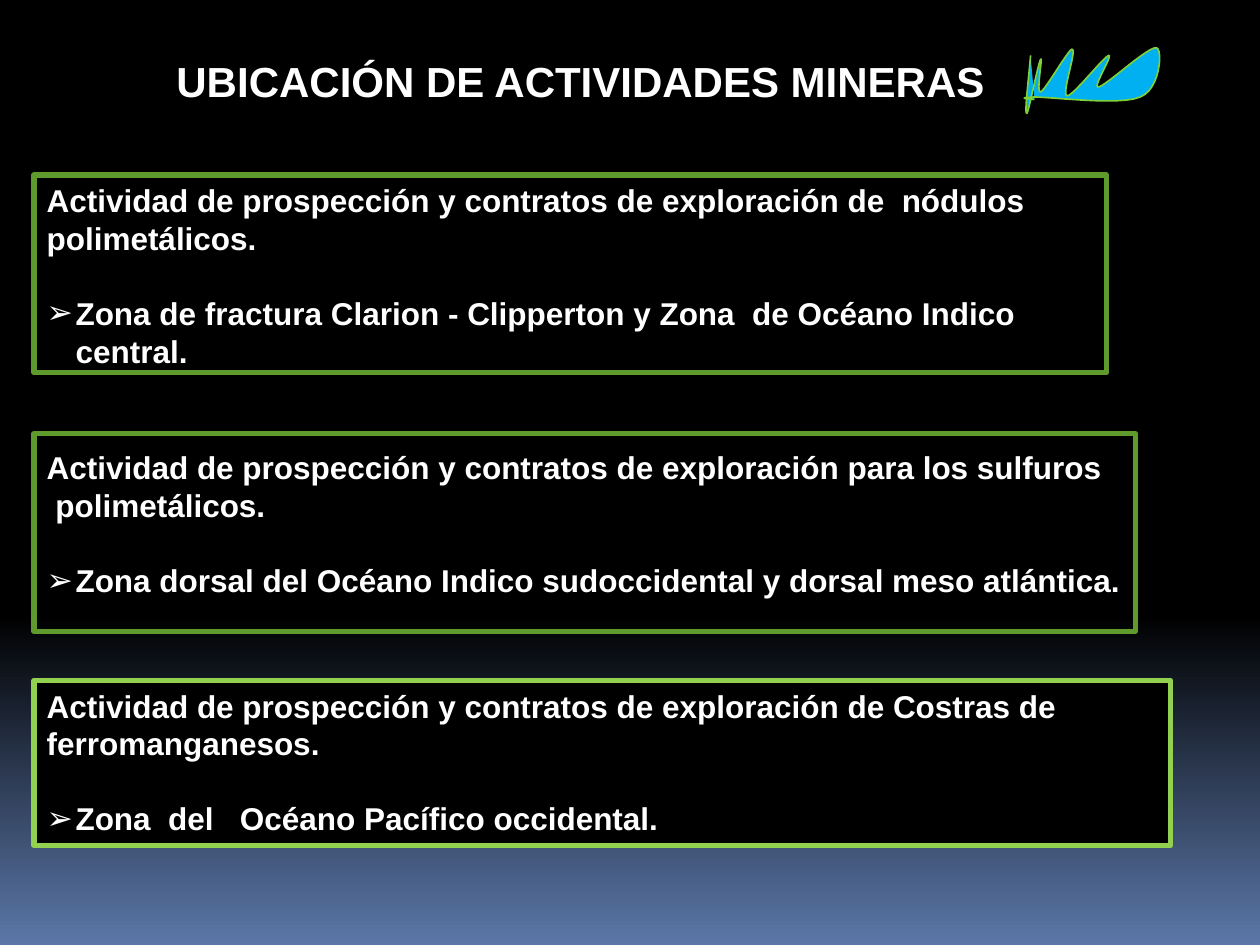
from collections import namedtuple

from lxml.etree import SubElement
from pptx import Presentation
from pptx.dml.color import RGBColor
from pptx.enum.text import MSO_ANCHOR as Anchor, MSO_AUTO_SIZE as AutoSize, PP_ALIGN as Align
from pptx.oxml.ns import qn
from pptx.util import Emu, Inches, Pt

BLACK = RGBColor(0x00, 0x00, 0x00)
WHITE = RGBColor(0xFF, 0xFF, 0xFF)
SLATE_BLUE = RGBColor(0x5B, 0x77, 0xA8)
DARK_GREEN = RGBColor(0x5E, 0x9B, 0x2C)
LIGHT_GREEN = RGBColor(0x92, 0xD0, 0x50)
WAVE_GREEN = RGBColor(0x7F, 0xD1, 0x3B)
WAVE_BLUE = RGBColor(0x00, 0xB0, 0xF0)

FONT = "Arial"
SLIDE_W, SLIDE_H = Inches(10), Inches(7.5)
LINE_PITCH = Pt(21.5)
BULLET_INDENT = 0.023 * SLIDE_W
COMPARISON_LAYOUT = 4

Box = namedtuple("Box", "left top width height")
Activity = namedtuple("Activity", "lead zone box border fill top_inset lead_indent")


def share(left, top, width, height):
    """Box from percentages of the slide's width and height."""
    return Box(Emu(round(SLIDE_W * left / 100)), Emu(round(SLIDE_H * top / 100)),
               Emu(round(SLIDE_W * width / 100)), Emu(round(SLIDE_H * height / 100)))


ACTIVITIES = [
    Activity("Actividad de prospección y contratos de exploración de  nódulos polimetálicos.",
             "Zona de fractura Clarion - Clipperton y Zona  de Océano Indico central.",
             share(2.7, 18.53, 85.1, 20.93), DARK_GREEN, None, 0.05, 0),
    Activity("Actividad de prospección y contratos de exploración para los sulfuros polimetálicos.",
             "Zona dorsal del Océano Indico sudoccidental y dorsal meso atlántica.",
             share(2.7, 45.87, 87.4, 20.93), DARK_GREEN, None, 0.12, 0.007 * SLIDE_W),
    Activity("Actividad de prospección y contratos de exploración de Costras de ferromanganesos.",
             "Zona  del   Océano Pacífico occidental.",
             share(2.7, 72, 90.2, 17.47), LIGHT_GREEN, BLACK, 0.05, 0),
]

# Wave outline on a 116 x 54 grid: a start, then cubic curves (two controls, end).
WAVE_GRID = (116, 54)
WAVE_START = (11, 8)
WAVE_CURVES = [
    ((9, 31), (6, 54), (8, 54)),
    ((9, 55), (17, 14), (19, 11)),
    ((21, 8), (15, 38), (19, 37)),
    ((23, 35), (41, 3), (44, 3)),
    ((48, 4), (35, 39), (40, 40)),
    ((44, 41), (69, 9), (73, 8)),
    ((77, 7), (59, 35), (65, 33)),
    ((71, 32), (105, 0), (111, 2)),
    ((116, 3), (114, 35), (98, 41)),
    ((82, 48), (28, 41), (14, 41)),
    ((0, 42), (7, 42), (14, 43)),
]


def paint_background(slide):
    fill = slide.background.fill
    fill.gradient()
    fill.gradient_angle = 270
    for stop, color, position in zip(fill.gradient_stops, (BLACK, SLATE_BLUE), (0.65, 1)):
        stop.color.rgb = color
        stop.position = position


def place(holder, box, top_inset):
    holder.left, holder.top, holder.width, holder.height = box
    frame = holder.text_frame
    frame.auto_size = AutoSize.NONE
    frame.word_wrap = True
    frame.vertical_anchor = Anchor.TOP
    frame.margin_left, frame.margin_right = Inches(0.1), 0
    frame.margin_top, frame.margin_bottom = Inches(top_inset), 0
    return frame


def write(paragraph, text, size):
    paragraph.alignment = Align.LEFT
    paragraph.space_before = Pt(0)
    run = paragraph.add_run()
    run.text = text
    run.font.name, run.font.size, run.font.bold = FONT, Pt(size), True
    run.font.color.rgb = WHITE


def hang(paragraph, indent, bullet=None):
    """Hanging indent, with a bullet character or none."""
    props = paragraph._p.get_or_add_pPr()
    props.set("marL", str(round(indent)))
    props.set("indent", str(-round(indent)))
    if bullet:
        SubElement(props, qn("a:buFont")).set("typeface", FONT)
        SubElement(props, qn("a:buChar")).set("char", bullet)
    else:
        SubElement(props, qn("a:buNone"))


def add_heading(holder, box):
    frame = place(holder, box, 0.08)
    write(frame.paragraphs[0], "UBICACIÓN DE ACTIVIDADES MINERAS", 24)


def add_activity(holder, activity):
    frame = place(holder, activity.box, activity.top_inset)
    holder.line.color.rgb = activity.border
    holder.line.width = Pt(3)
    if activity.fill is None:
        holder.fill.background()
    else:
        holder.fill.solid()
        holder.fill.fore_color.rgb = activity.fill

    lead, zone = frame.paragraphs[0], frame.add_paragraph()
    for paragraph, text in ((lead, activity.lead), (zone, activity.zone)):
        write(paragraph, text, 18)
        paragraph.line_spacing = LINE_PITCH
    zone.space_before = LINE_PITCH
    hang(lead, activity.lead_indent)
    hang(zone, BULLET_INDENT, "➢")


def curve_points(start, curves, steps=12):
    """Points along a chain of cubic curves."""
    for first, second, end in curves:
        for step in range(1, steps + 1):
            t = step / steps
            u = 1 - t
            yield tuple(u**3 * a + 3 * u * u * t * b + 3 * u * t * t * c + t**3 * d
                        for a, b, c, d in zip(start, first, second, end))
        start = end


def add_wave(slide, box):
    def to_slide(point):
        return (box.left + box.width * point[0] / WAVE_GRID[0],
                box.top + box.height * point[1] / WAVE_GRID[1])

    builder = slide.shapes.build_freeform(*to_slide(WAVE_START))
    builder.add_line_segments(
        [to_slide(point) for point in curve_points(WAVE_START, WAVE_CURVES)], close=False)
    wave = builder.convert_to_shape()
    wave.shadow.inherit = False
    wave.fill.solid()
    wave.fill.fore_color.rgb = WAVE_BLUE
    wave.line.color.rgb = WAVE_GREEN
    wave.line.width = Pt(0.94)


def main():
    deck = Presentation()
    deck.slide_width, deck.slide_height = SLIDE_W, SLIDE_H
    slide = deck.slides.add_slide(deck.slide_layouts[COMPARISON_LAYOUT])
    paint_background(slide)

    heading, *bodies = slide.placeholders
    add_heading(heading, share(13, 4.8, 67, 6.67))
    for holder, activity in zip(bodies, ACTIVITIES):
        add_activity(holder, activity)
    for unused in bodies[len(ACTIVITIES):]:
        unused._element.getparent().remove(unused._element)
    add_wave(slide, share(80.7, 4.8, 11.6, 7.2))

    deck.save("out.pptx")


if __name__ == "__main__":
    main()
